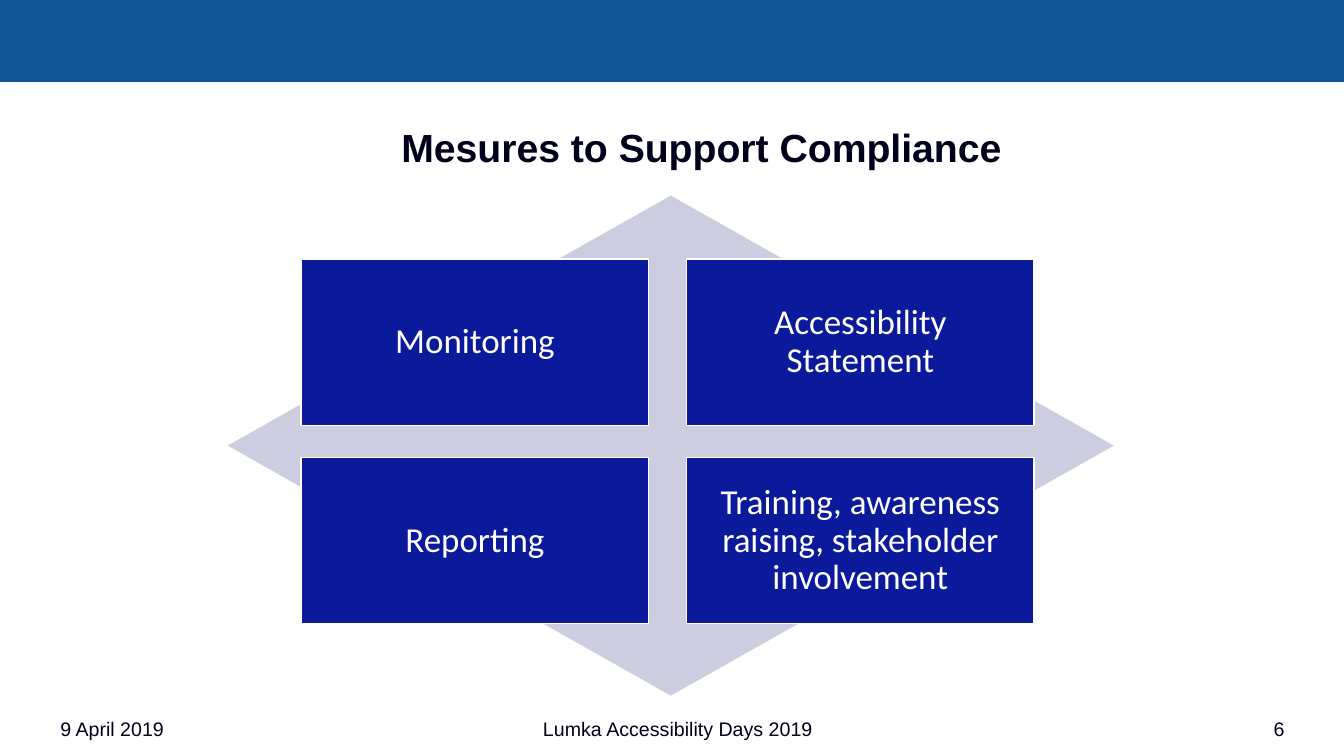
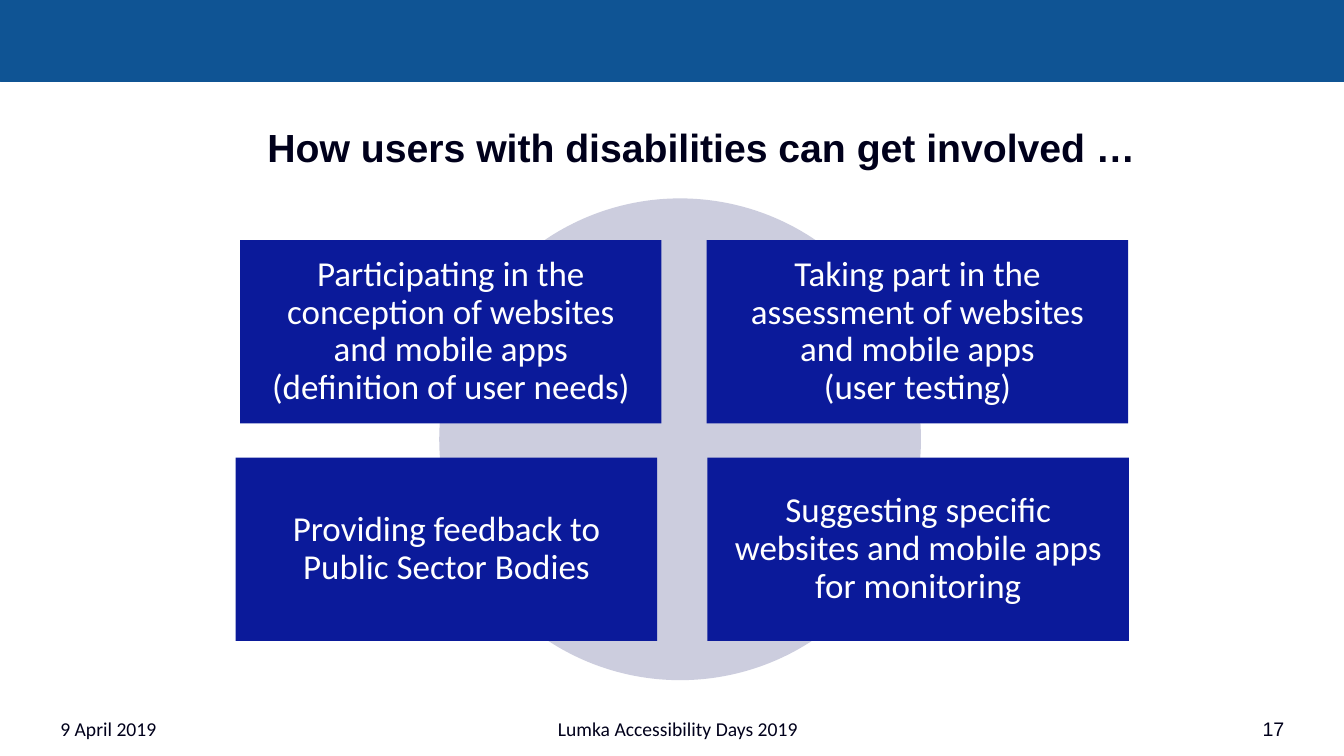
from dataclasses import dataclass

from pptx import Presentation
from pptx.dml.color import RGBColor
from pptx.enum.shapes import MSO_SHAPE
from pptx.enum.text import MSO_ANCHOR, MSO_AUTO_SIZE, PP_ALIGN
from pptx.oxml.ns import qn
from pptx.util import Cm, Pt


@dataclass(frozen=True)
class Theme:
    band: str = "0F5494"
    ink: str = "00001B"
    card: str = "0B1A9A"
    backdrop: str = "CCCDDE"
    white: str = "FFFFFF"
    heading_font: str = "Arial"
    card_font: str = "Calibri"
    title_size: int = 28
    card_size: int = 25
    footer_size: int = 14


THEME = Theme()
SLIDE_WIDTH, SLIDE_HEIGHT = 33.87, 19.05
EVENT_DATE = "9 April 2019"
EVENT_NAME = "Lumka Accessibility Days 2019"


def place(left, top, width, height):
    return Cm(left), Cm(top), Cm(width), Cm(height)


def write_text(frame, text, *, font=THEME.heading_font, size=THEME.footer_size,
               color=THEME.ink, bold=False, align=PP_ALIGN.LEFT,
               line_spacing=None, anchor=MSO_ANCHOR.TOP, inset=None):
    frame.word_wrap = True
    frame.auto_size = MSO_AUTO_SIZE.NONE
    frame.vertical_anchor = anchor
    if inset is not None:
        frame.margin_left = frame.margin_right = Cm(inset)
        frame.margin_top = frame.margin_bottom = Cm(inset)
    paragraph = frame.paragraphs[0]
    paragraph.text = text
    paragraph.alignment = align
    if line_spacing:
        paragraph.line_spacing = line_spacing
    for run in paragraph.runs:
        run.font.name = font
        run.font.size = Pt(size)
        run.font.bold = bold
        run.font.color.rgb = RGBColor.from_string(color)


def add_filled(slide, outline, box, fill, line=None, line_width=1):
    figure = slide.shapes.add_shape(outline, *place(*box))
    figure.shadow.inherit = False
    figure.fill.solid()
    figure.fill.fore_color.rgb = RGBColor.from_string(fill)
    if line:
        figure.line.color.rgb = RGBColor.from_string(line)
        figure.line.width = Pt(line_width)
    else:
        figure.line.fill.background()
    return figure


def set_up_layout(layout):
    title = layout.placeholders[0]
    title.left, title.top, title.width, title.height = place(2.74, 3.12, 29.87, 2.26)


def add_band_to_master(master, slide):
    # The band is drawn on a slide, then moved behind everything on the master
    band = add_filled(slide, MSO_SHAPE.RECTANGLE, (0, 0, SLIDE_WIDTH, 2.06),
                      THEME.band, THEME.band, 0.5).element
    band.find(".//" + qn("p:cNvPr")).set("id", "100")
    master.shapes.element.insert(2, band)


def add_title(slide, text):
    write_text(slide.shapes.title.text_frame, text, size=THEME.title_size,
               bold=True, align=PP_ALIGN.CENTER, line_spacing=0.9)


def add_footer(slide, number, font):
    parts = (
        (EVENT_DATE, 1.27, 5.92, PP_ALIGN.LEFT, font),
        (EVENT_NAME, 8.46, 17.25, PP_ALIGN.CENTER, font),
        (str(number), 26.7, 5.92, PP_ALIGN.RIGHT, THEME.heading_font),
    )
    for text, left, width, align, part_font in parts:
        footer = slide.shapes.add_textbox(*place(left, 17.93, width, 1))
        write_text(footer.text_frame, text, font=part_font, align=align)


def add_cards(slide, rows, width, height, line=None):
    for top, cards in rows:
        for left, text in cards:
            card = add_filled(slide, MSO_SHAPE.RECTANGLE,
                              (left, top, width, height), THEME.card, line)
            write_text(card.text_frame, text, font=THEME.card_font,
                       size=THEME.card_size, color=THEME.white,
                       align=PP_ALIGN.CENTER, line_spacing=0.9,
                       anchor=MSO_ANCHOR.MIDDLE, inset=0.56)


def build_measures(slide):
    add_title(slide, "Mesures to Support Compliance")
    add_filled(slide, MSO_SHAPE.DIAMOND, (5.74, 4.93, 22.33, 12.6), THEME.backdrop)
    left, right = 7.59, 17.3
    add_cards(slide, (
        (6.53, ((left, "Monitoring"), (right, "Accessibility Statement"))),
        (11.53, ((left, "Reporting"),
                 (right, "Training, awareness raising, stakeholder involvement"))),
    ), 8.76, 4.19, THEME.white)
    add_footer(slide, 6, THEME.heading_font)


def build_involvement(slide):
    add_title(slide, "How users with disabilities can get involved …")
    add_filled(slide, MSO_SHAPE.OVAL, (11.07, 5, 12.14, 12.14), THEME.backdrop)
    add_cards(slide, (
        (6.05, (
            (6.05, "Participating in the conception of websites and mobile apps\n"
                   "(definition of user needs)"),
            (17.81, "Taking part in the assessment of websites and mobile apps\n"
                    "(user testing)"))),
        (11.53, (
            (5.94, "Providing feedback to Public Sector Bodies"),
            (17.83, "Suggesting specific websites and mobile apps for monitoring"))),
    ), 10.62, 4.62)
    add_footer(slide, 17, THEME.card_font)


def main():
    deck = Presentation()
    deck.slide_width, deck.slide_height = Cm(SLIDE_WIDTH), Cm(SLIDE_HEIGHT)
    title_only = deck.slide_layouts[5]
    set_up_layout(title_only)
    measures = deck.slides.add_slide(title_only)
    add_band_to_master(deck.slide_master, measures)
    build_measures(measures)
    build_involvement(deck.slides.add_slide(title_only))
    deck.save("out.pptx")


if __name__ == "__main__":
    main()
